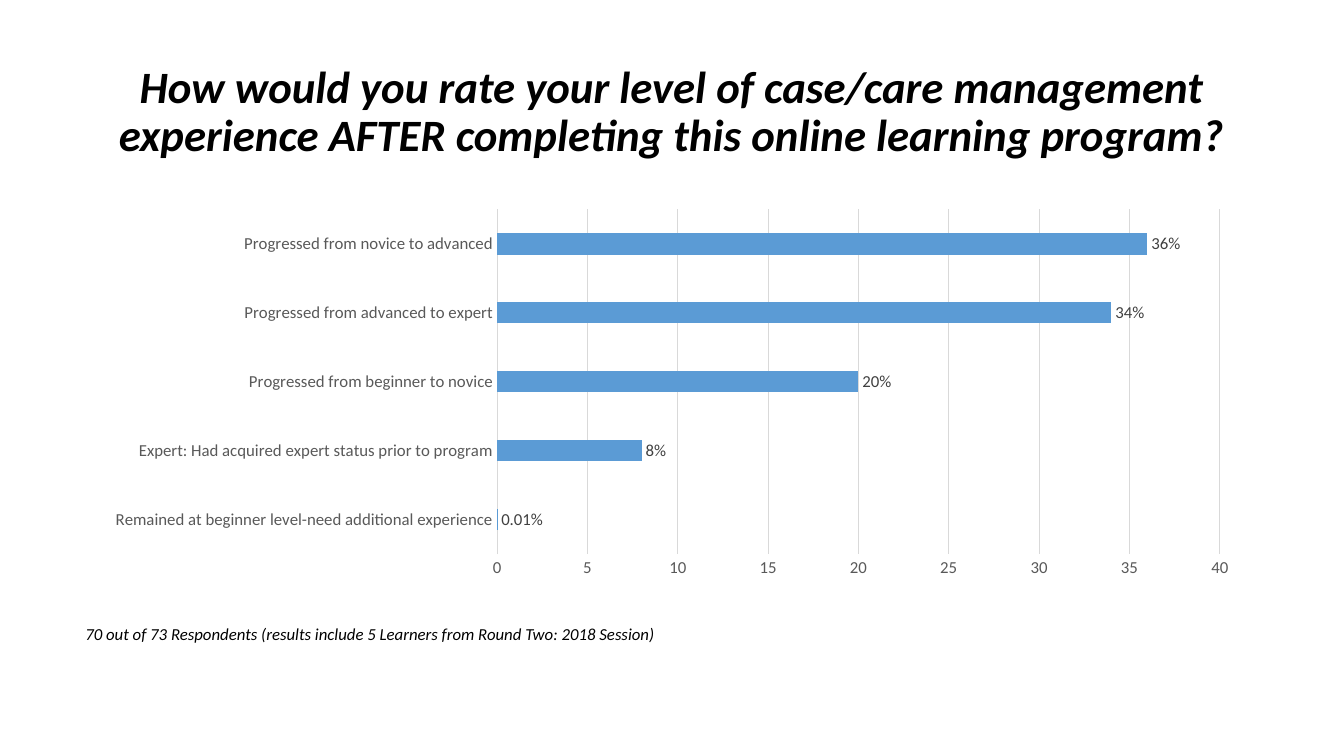
from dataclasses import dataclass

from pptx import Presentation
from pptx.chart.axis import _BaseAxis
from pptx.chart.data import CategoryChartData
from pptx.dml.color import RGBColor
from pptx.enum.chart import XL_CHART_TYPE, XL_LABEL_POSITION, XL_TICK_MARK
from pptx.enum.text import MSO_ANCHOR, PP_ALIGN
from pptx.slide import Slide
from pptx.text.text import Font
from pptx.util import Cm, Pt

FONT = "Calibri"
COLORS = {
    "text": "000000",
    "axis": "595959",
    "label": "404040",
    "grid": "D9D9D9",
    "bar": "5B9BD5",
}


@dataclass(frozen=True)
class Passage:
    words: str
    left: float
    top: float
    width: float
    height: float
    size: int
    bold: bool = False
    align: PP_ALIGN = PP_ALIGN.LEFT
    anchor: MSO_ANCHOR = MSO_ANCHOR.TOP
    spacing: float = 1.0


@dataclass(frozen=True)
class Answer:
    wording: str
    percent: float


PASSAGES = [
    Passage(
        "How would you rate your level of case/care management experience "
        "AFTER completing this online learning program?",
        2.33, 1.01, 29.21, 3.68, 32, True, PP_ALIGN.CENTER, MSO_ANCHOR.MIDDLE, 0.9,
    ),
    Passage(
        "70 out of 73 Respondents (results include 5 Learners from Round Two: 2018 Session)",
        1.9, 15.6, 17.25, 0.77, 12,
    ),
]

ANSWERS = [
    Answer("Remained at beginner level-need additional experience", 0.01),
    Answer("Expert: Had acquired expert status prior to program", 8),
    Answer("Progressed from beginner to novice", 20),
    Answer("Progressed from advanced to expert", 34),
    Answer("Progressed from novice to advanced", 36),
]


def color(name: str) -> RGBColor:
    return RGBColor.from_string(COLORS[name])


def style_font(font: Font, size: int, color_name: str) -> None:
    font.name = FONT
    font.size = Pt(size)
    font.color.rgb = color(color_name)


def add_passage(slide: Slide, passage: Passage) -> None:
    frame = slide.shapes.add_textbox(
        Cm(passage.left), Cm(passage.top), Cm(passage.width), Cm(passage.height)
    ).text_frame
    frame.word_wrap = True
    frame.vertical_anchor = passage.anchor
    paragraph = frame.paragraphs[0]
    paragraph.alignment = passage.align
    paragraph.line_spacing = passage.spacing
    run = paragraph.add_run()
    run.text = passage.words
    style_font(run.font, passage.size, "text")
    run.font.bold = passage.bold
    run.font.italic = True


def style_axis(axis: _BaseAxis) -> None:
    axis.major_tick_mark = XL_TICK_MARK.NONE
    axis.minor_tick_mark = XL_TICK_MARK.NONE
    style_font(axis.tick_labels.font, 12, "axis")


def add_answer_chart(slide: Slide, answers: list[Answer]) -> None:
    ratings = CategoryChartData()
    ratings.categories = [answer.wording for answer in answers]
    ratings.add_series("Series 1", [answer.percent for answer in answers])
    chart = slide.shapes.add_chart(
        XL_CHART_TYPE.BAR_CLUSTERED, Cm(2.33), Cm(5.08), Cm(29.21), Cm(9.68), ratings
    ).chart
    chart.has_legend = False
    chart.has_title = False
    style_font(chart.font, 10, "text")

    style_axis(chart.category_axis)
    answer_line = chart.category_axis.format.line
    answer_line.color.rgb = color("grid")
    answer_line.width = Pt(0.75)

    percent_axis = chart.value_axis
    style_axis(percent_axis)
    percent_axis.minimum_scale = 0
    percent_axis.maximum_scale = 40
    percent_axis.major_unit = 5
    percent_axis.format.line.fill.background()
    grid_line = percent_axis.major_gridlines.format.line
    grid_line.color.rgb = color("grid")
    grid_line.width = Pt(0.75)
    percent_axis.tick_labels.number_format = "0"
    percent_axis.tick_labels.number_format_is_linked = False

    plot = chart.plots[0]
    plot.gap_width = 219
    plot.vary_by_categories = False
    bars = plot.series[0]
    bars.format.fill.solid()
    bars.format.fill.fore_color.rgb = color("bar")

    percents = bars.data_labels
    percents.show_value = True
    percents.position = XL_LABEL_POSITION.OUTSIDE_END
    percents.number_format = '[<1]0.00"%";0"%"'
    percents.number_format_is_linked = False
    style_font(percents.font, 12, "label")


def main() -> None:
    deck = Presentation()
    deck.slide_width = Cm(33.87)
    deck.slide_height = Cm(19.05)
    slide = deck.slides.add_slide(deck.slide_layouts[6])
    for passage in PASSAGES:
        add_passage(slide, passage)
    add_answer_chart(slide, ANSWERS)
    deck.save("out.pptx")


if __name__ == "__main__":
    main()
